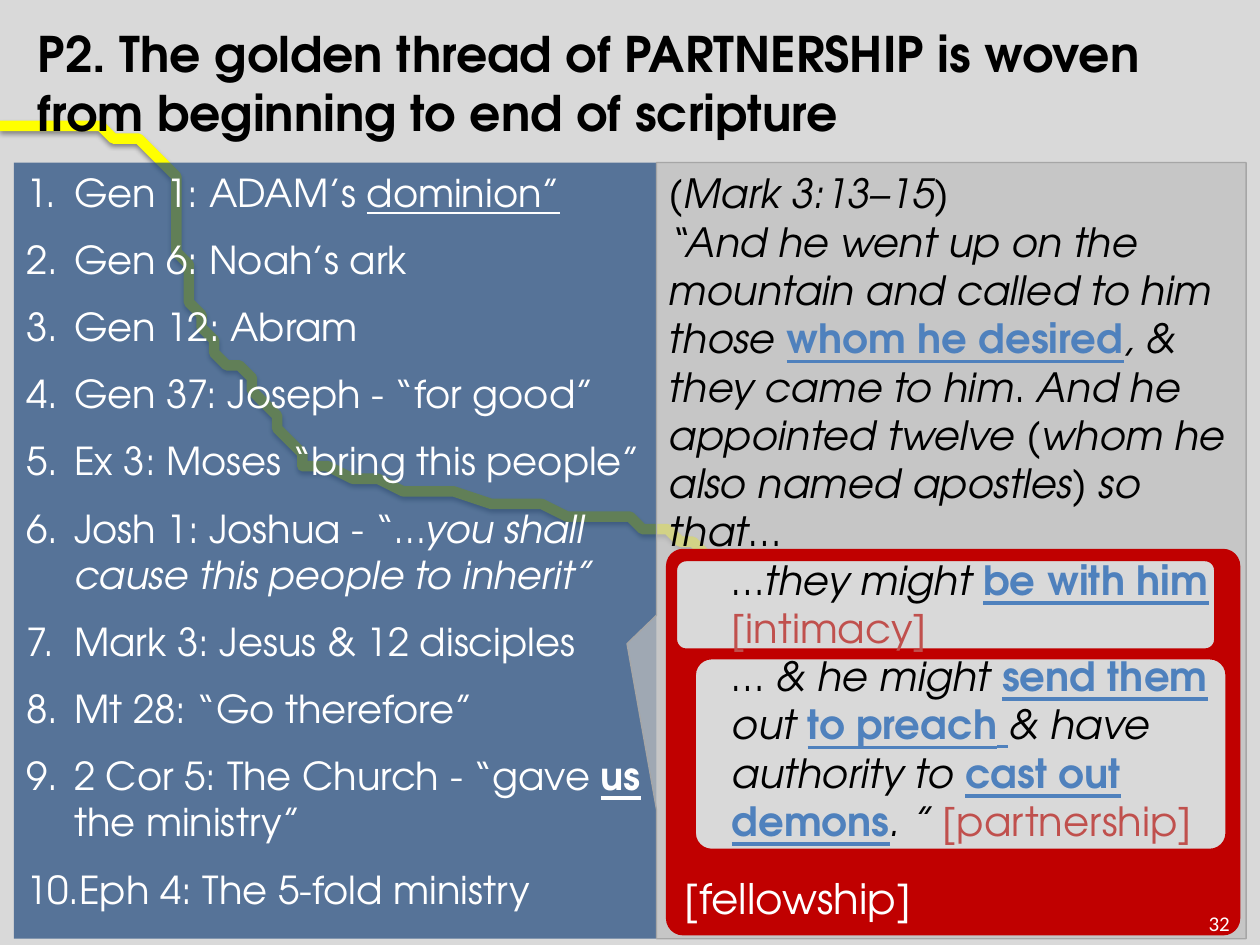
from lxml import etree
from pptx import Presentation
from pptx.dml.color import RGBColor
from pptx.enum.shapes import MSO_SHAPE
from pptx.enum.text import MSO_ANCHOR, MSO_AUTO_SIZE, PP_ALIGN
from pptx.oxml.ns import qn
from pptx.util import Inches, Pt

RECT, ROUND = MSO_SHAPE.RECTANGLE, MSO_SHAPE.ROUNDED_RECTANGLE
CALL = MSO_SHAPE.RECTANGULAR_CALLOUT
TOP, MID, LOW = MSO_ANCHOR.TOP, MSO_ANCHOR.MIDDLE, MSO_ANCHOR.BOTTOM
LEFT, RIGHT = PP_ALIGN.LEFT, PP_ALIGN.RIGHT
FIXED = MSO_AUTO_SIZE.NONE

BLACK = RGBColor(0x00, 0x00, 0x00)
WHITE = RGBColor(0xFF, 0xFF, 0xFF)
PALE = RGBColor(0xD9, 0xD9, 0xD9)
GREY = RGBColor(0xBF, 0xBF, 0xBF)
EDGE = RGBColor(0xA6, 0xA6, 0xA6)
NAVY = RGBColor(0x1F, 0x49, 0x7D)
BLUE = RGBColor(0x4F, 0x81, 0xBD)
RED = RGBColor(0xC0, 0x00, 0x00)
ROSE = RGBColor(0xC0, 0x50, 0x4D)
GOLD = RGBColor(0xFF, 0xFF, 0x00)

# Run looks: any of i, b, u, and a colour
ITAL = {"i": True}
LINE = {"u": True}
BOLD = {"b": True}
KEY = {"b": True, "u": True, "color": BLUE}
GAP = {"u": True, "color": BLUE}
TAG = {"color": ROSE}


class Board:
    """One slide on a grid of 100 columns by 75 rows."""

    face = "TeX Gyre Adventor"

    def __init__(self, deck):
        self.cell = deck.slide_width / 100
        self.slide = deck.slides.add_slide(deck.slide_layouts[5])
        self.shapes = self.slide.shapes
        fill = self.slide.background.fill
        fill.solid()
        fill.fore_color.rgb = PALE

    def grid(self, *spans):
        return [round(span * self.cell) for span in spans]

    def words(self, shape, paras, size, color, anchor=TOP, align=LEFT, face=face):
        frame = shape.text_frame
        frame.word_wrap = True
        frame.auto_size = FIXED
        frame.vertical_anchor = anchor
        for at, runs in enumerate(paras):
            para = frame.paragraphs[0] if at == 0 else frame.add_paragraph()
            para.alignment = align
            for text, look in runs:
                if text == "\n":
                    para.add_line_break()
                    continue
                run = para.add_run()
                run.text = text
                font = run.font
                font.name, font.size = face, Pt(size)
                font.bold = look.get("b", False)
                font.italic = look.get("i", False)
                font.underline = look.get("u", False)
                font.color.rgb = look.get("color", color)
        return frame.paragraphs

    def title(self, box, text, size):
        shape = self.shapes.title
        shape.left, shape.top, shape.width, shape.height = self.grid(*box)
        shape.element.getparent().append(shape.element)
        self.words(shape, [[(text, BOLD)]], size, BLACK)

    def label(self, box, paras, size, color, **style):
        shape = self.shapes.add_textbox(*self.grid(*box))
        return self.words(shape, paras, size, color, **style)

    def panel(self, kind, box, fill, edge=None, width=2, adjust=(), alpha=None):
        shape = self.shapes.add_shape(kind, *self.grid(*box))
        shape.shadow.inherit = False
        for at, value in enumerate(adjust):
            shape.adjustments[at] = value
        shape.fill.solid()
        shape.fill.fore_color.rgb = fill
        if alpha:
            tint = shape.element.spPr.find(qn("a:solidFill"))[0]
            etree.SubElement(tint, qn("a:alpha"), val=str(alpha * 1000))
        if edge is None:
            shape.line.fill.background()
        else:
            shape.line.color.rgb = edge
            shape.line.width = Pt(width)
        return shape

    def number(self, paras, indent, space):
        for at, para in enumerate(paras):
            props = para._p.get_or_add_pPr()
            props.set("marL", str(Inches(indent)))
            props.set("indent", str(-Inches(indent)))
            etree.SubElement(props, qn("a:buAutoNum"), type="arabicPeriod")
            if at:
                para.space_before = Pt(space)

    def thread(self, start, curves, color, width):
        points, here = [start], start
        for one, two, end in curves:
            for step in range(1, 13):
                t = step / 12
                s = 1 - t
                points.append(tuple(
                    s**3 * a + 3 * s * s * t * b + 3 * s * t * t * c + t**3 * d
                    for a, b, c, d in zip(here, one, two, end)))
            here = end
        curve = self.shapes.build_freeform(*start, scale=self.cell)
        curve.add_line_segments(points[1:], close=False)
        shape = curve.convert_to_shape()
        shape.fill.background()
        shape.line.color.rgb = color
        shape.line.width = Pt(width)
        # Soft shadow under the thread
        shape.shadow.inherit = False
        glow = etree.SubElement(
            shape.element.spPr.find(qn("a:effectLst")), qn("a:outerShdw"),
            blurRad=str(Pt(3.1)), dist=str(Pt(1.6)), dir="5400000", rotWithShape="0")
        tint = etree.SubElement(glow, qn("a:srgbClr"), val=str(BLACK))
        etree.SubElement(tint, qn("a:alpha"), val="38000")


THREAD = [
    ((4.2, 10.5), (9.8, 9.7), (12.5, 12.4)),
    ((15.2, 15.2), (13.4, 22.2), (16.1, 25.8)),
    ((18.8, 29.4), (21.6, 33.1), (24.3, 36.7)),
    ((29.6, 39.3), (43.1, 39.9), (48.5, 41.2)),
    ((53.9, 42.5), (54.5, 42.5), (56.9, 44.4)),
    ((59.4, 46.3), (58.9, 49), (63, 52.5)),
    ((67.1, 56), (76.8, 63.3), (81.6, 65.2)),
    ((85.1, 64.8), (88.5, 64.5), (92, 64.1)),
]

STORY = [
    [("Gen 1: ADAM’s ", {}), ("dominion”", LINE)],
    [("Gen 6: Noah’s ark", {})],
    [("Gen 12: Abram", {})],
    [("Gen 37: Joseph - “for good”", {})],
    [("Ex 3: Moses “bring this people”", {})],
    [("Josh 1: Joshua - “", {}), ("…you shall cause this people to inherit”", ITAL)],
    [("Mark 3: Jesus & 12 disciples", {})],
    [("Mt 28: “Go therefore”", {})],
    [("2 Cor 5: The Church - “gave ", {}), ("us", {**BOLD, **LINE}),
     (" the ministry”", {})],
    [("Eph 4: The 5-fold ministry", {})],
]

VERSE = [
    [("(Mark 3:13–15)", ITAL), ("\n", {}),
     ("“And he went up on the mountain and called to him those ", ITAL),
     ("whom he desired", KEY), (", & they came to him", ITAL), (". ", {}),
     ("And he appointed twelve (whom he also named apostles) so that…", ITAL)],
    [("…they might ", ITAL), ("be with him ", KEY), ("[intimacy]", TAG)],
    [("… & he might ", ITAL), ("send them", KEY), (" ", GAP), ("out ", ITAL),
     ("to preach", KEY), (" ", GAP), ("& have authority to ", ITAL),
     ("cast out demons", KEY), (". ” ", ITAL), ("[partnership]", TAG)],
]


def main():
    deck = Presentation()
    deck.slide_width, deck.slide_height = Inches(10), Inches(7.5)
    board = Board(deck)
    left, right = (1.1, 12.9, 51, 61.6), (52.1, 12.9, 46.8, 61.6)

    # Golden thread behind both panels
    board.thread((0, 9.5), THREAD, GOLD, 6)

    # Numbered story on the left
    panel = board.panel(RECT, left, NAVY, alpha=70)
    board.number(board.words(panel, STORY, 22, WHITE), 0.38, 12)

    # Callout and title
    board.panel(CALL, right, GREY, EDGE, 0.75, (-0.55, 0.12), alpha=70)
    board.title((2, 1.4, 90, 5.5), "P2. The golden thread of PARTNERSHIP is woven "
                "from beginning to end of scripture", 28)

    # Fellowship frame with its two inner cards
    frame = board.panel(ROUND, (53, 43.7, 45.3, 30.4), RED, RED, adjust=[0.04])
    board.words(frame, [[("[fellowship]", {})]], 24, WHITE, anchor=LOW)
    board.label((75.3, 71.3, 23.3, 4), [[("32", {})]], 12, WHITE,
                anchor=MID, align=RIGHT, face="Calibri")
    board.panel(ROUND, (53.6, 44.4, 42.9, 7.2), PALE, RED, adjust=[0.12])
    board.panel(ROUND, (55.1, 52.2, 42.3, 15.3), PALE, RED, adjust=[0.09])

    # Verse over the callout and cards
    for para in board.label(right, VERSE, 23, BLACK)[1:]:
        para.level = 1
        props = para._p.get_or_add_pPr()
        props.set("marL", str(Inches(0.5)))
        props.set("indent", "0")

    deck.save("out.pptx")


if __name__ == "__main__":
    main()
